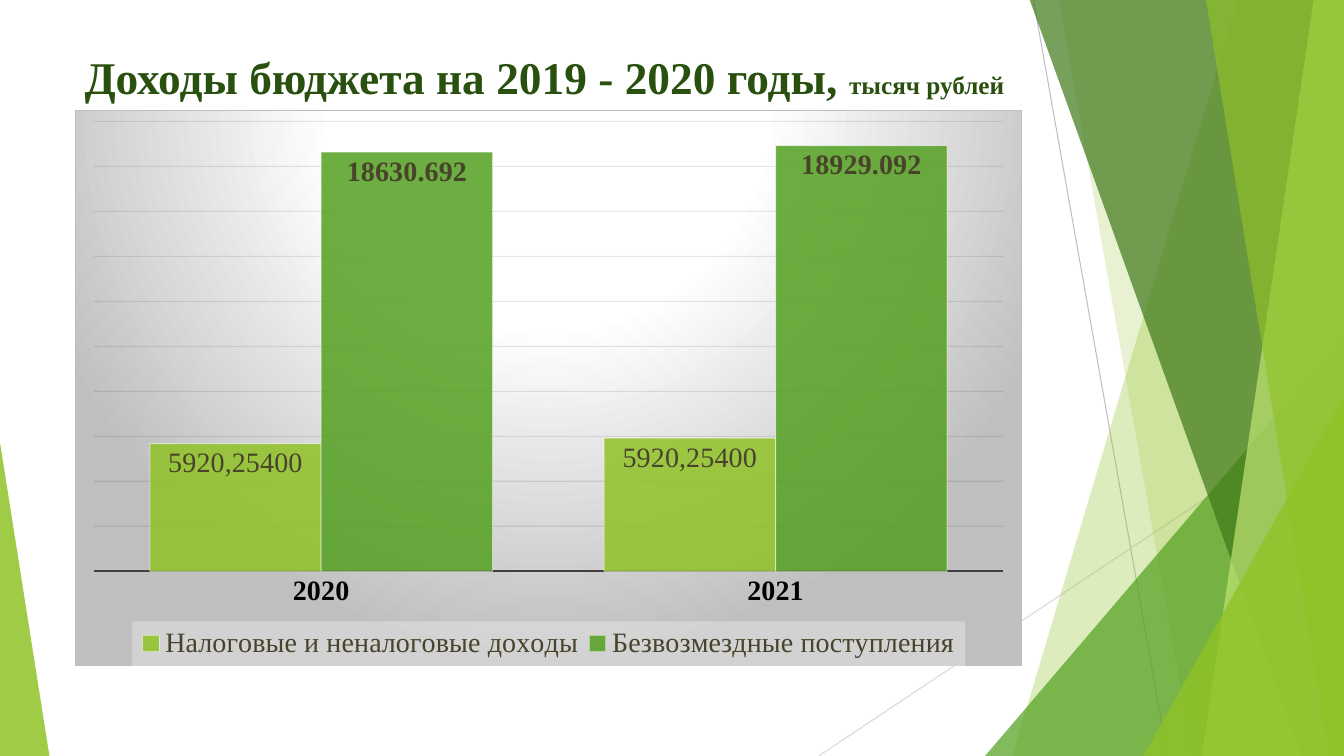
import pptx
import pptx.chart.data
import pptx.dml.color
import pptx.enum.chart
import pptx.enum.shapes
import pptx.enum.text
import pptx.oxml
import pptx.oxml.ns
import pptx.util
from lxml import etree

Inches, Pt, qn = pptx.util.Inches, pptx.util.Pt, pptx.oxml.ns.qn
SLIDE_W, SLIDE_H = 13.33, 7.5
FONT = "Times New Roman"
COLORS = {
    "lime": "90C226", "green": "54A021", "forest": "3F7819", "pale": "C0E474",
    "title": "2A5010", "label": "48432A", "black": "000000", "white": "FFFFFF",
    "axis": "404040", "grid": "0D0D0D", "grey": "BFBFBF", "light_grey": "D9D9D9",
    "legend": "F2F2F2",
}
TITLE_RUNS = [("Доходы бюджета на 2019 - 2020 годы, ", 32.4), ("тысяч рублей", 18)]
YEARS = ["2020", "2021"]
INCOME = [
    ("Налоговые и неналоговые доходы", [5675.054, 5920.254], "lime", ["5920,25400"] * 2),
    ("Безвозмездные поступления", [18630.692, 18929.092], "green", []),
]


def rgb(name):
    return pptx.dml.color.RGBColor.from_string(COLORS[name])


def style_font(font, size, color, bold=False):
    for attribute, value in {"name": FONT, "size": Pt(size), "bold": bold}.items():
        setattr(font, attribute, value)
    font.color.rgb = rgb(color)


def style_line(line, color, width):
    line.color.rgb = rgb(color)
    line.width = Pt(width)


def fade(element, opacity):
    """Give the first colour in the element an opacity in percent."""
    color = element.find(".//" + qn("a:srgbClr"))
    etree.SubElement(color, qn("a:alpha")).set("val", str(opacity * 1000))


def fill_facet(facet, color, opacity):
    facet.shadow.inherit = False
    facet.fill.solid()
    facet.fill.fore_color.rgb = rgb(color)
    facet.line.fill.background()
    fade(facet._element.spPr, opacity)


def draw_ray(slide, start, end, color):
    ray = slide.shapes.add_connector(
        pptx.enum.shapes.MSO_CONNECTOR.STRAIGHT, *map(Inches, start + end))
    style_line(ray.line, color, 0.75)
    etree.SubElement(ray._element.spPr, qn("a:effectLst"))


def draw_band(slide, top_left, bottom_left, color, opacity):
    """A facet from a slanted left edge to the right edge of the slide."""
    top, bottom = -0.01, SLIDE_H
    corners = [(top_left, top), (SLIDE_W, top), (SLIDE_W, bottom), (bottom_left, bottom)]
    points = [(Inches(x), Inches(y)) for x, y in corners]
    outline = slide.shapes.build_freeform(*points[0])
    outline.add_line_segments(points[1:], close=True)
    fill_facet(outline.convert_to_shape(), color, opacity)


def draw_corner(slide, left, top, width, apex, color, opacity):
    """A right triangle standing on the bottom edge of the slide."""
    corner = slide.shapes.add_shape(
        pptx.enum.shapes.MSO_SHAPE.ISOSCELES_TRIANGLE,
        Inches(left), Inches(top), Inches(width), Inches(SLIDE_H - top))
    corner.adjustments[0] = apex
    fill_facet(corner, color, opacity)


def draw_facets(slide):
    draw_ray(slide, (10.25, 0), (11.58, SLIDE_H), "grey")
    draw_ray(slide, (SLIDE_W, 4.03), (8.12, SLIDE_H), "light_grey")
    draw_band(slide, 12.28, 10.04, "lime", 30)
    draw_band(slide, 10.5, 11.83, "lime", 20)
    draw_corner(slide, 9.77, 3.33, 3.56, 1, "green", 72)
    draw_band(slide, 10.21, 12.91, "forest", 70)
    draw_band(slide, 13.03, 11.92, "pale", 70)
    draw_band(slide, 11.96, 13.18, "lime", 65)
    draw_corner(slide, 11.34, 3.93, 1.99, 1, "lime", 80)
    draw_corner(slide, 0, 4.39, 0.49, 0, "lime", 85)


def add_title(slide, left, top, width, height):
    heading = slide.shapes.add_textbox(*map(Inches, (left, top, width, height))).text_frame
    heading.word_wrap = True
    heading.vertical_anchor = pptx.enum.text.MSO_ANCHOR.BOTTOM
    for words, size in TITLE_RUNS:
        run = heading.paragraphs[0].add_run()
        run.text = words
        style_font(run.font, size, "title", True)


def chart_xml(body):
    return pptx.oxml.parse_xml(body.replace(">", " " + pptx.oxml.ns.nsdecls("c", "a") + ">", 1))


def manual_layout(x, y, w, h, inner=False):
    target = '<c:layoutTarget val="inner"/>' if inner else ""
    modes = '<c:xMode val="edge"/><c:yMode val="edge"/>'
    sizes = "".join(f'<c:{k} val="{v}"/>' for k, v in zip("xywh", (x, y, w, h)))
    return chart_xml(f"<c:layout><c:manualLayout>{target}{modes}{sizes}</c:manualLayout></c:layout>")


def drop_layout(element):
    for layout in element.findall(qn("c:layout")):
        element.remove(layout)


def style_series(series, color, captions):
    series.format.fill.solid()
    series.format.fill.fore_color.rgb = rgb(color)
    style_line(series.format.line, "white", 0.75)
    properties = series._element.spPr
    fade(properties, 85)
    fade(properties.find(qn("a:ln")), 50)
    inside = pptx.enum.chart.XL_LABEL_POSITION.INSIDE_END
    label_format = {"show_value": True, "position": inside,
                    "number_format": "0.000", "number_format_is_linked": False}
    for attribute, value in label_format.items():
        setattr(series.data_labels, attribute, value)
    style_font(series.data_labels.font, 20, "label", True)
    for index, caption in enumerate(captions):
        label = series.points[index].data_label
        run = label.text_frame.paragraphs[0].add_run()
        run.text = caption
        style_font(run.font, 20, "label")
        label.position = inside


def style_axes(chart):
    years, amounts = chart.category_axis, chart.value_axis
    years.major_tick_mark = pptx.enum.chart.XL_TICK_MARK.NONE
    style_font(years.tick_labels.font, 20, "black", True)
    style_line(years.format.line, "axis", 1.5)
    scale = {"minimum_scale": 0, "maximum_scale": 20000, "major_unit": 2000,
             "has_major_gridlines": True, "visible": False}
    for attribute, value in scale.items():
        setattr(amounts, attribute, value)
    style_line(amounts.major_gridlines.format.line, "grid", 0.75)
    fade(amounts._element.find(qn("c:majorGridlines")), 10)


def style_legend(chart):
    chart.has_legend = True
    legend = chart.legend
    legend.position = pptx.enum.chart.XL_LEGEND_POSITION.BOTTOM
    legend.include_in_layout = False
    style_font(legend.font, 20, "label")
    drop_layout(legend._element)
    overlay = legend._element.find(qn("c:overlay"))
    overlay.addprevious(manual_layout(0.06, 0.92, 0.88, 0.08))
    overlay.addnext(chart_xml(
        f'<c:spPr><a:solidFill><a:srgbClr val="{COLORS["legend"]}">'
        '<a:alpha val="39000"/></a:srgbClr></a:solidFill></c:spPr>'))


def style_background(chart):
    stops = "".join(
        f'<a:gs pos="{position * 1000}"><a:srgbClr val="{COLORS[color]}"/></a:gs>'
        for position, color in [(0, "white"), (39, "white"), (100, "grey")])
    chart._chartSpace.find(qn("c:chart")).addnext(chart_xml(
        f'<c:spPr><a:gradFill><a:gsLst>{stops}</a:gsLst><a:path path="circle">'
        '<a:fillToRect l="50000" t="-80000" r="50000" b="180000"/></a:path></a:gradFill>'
        f'<a:ln w="9525"><a:solidFill><a:srgbClr val="{COLORS["grey"]}"/></a:solidFill></a:ln>'
        "</c:spPr>"))


def add_income_chart(slide, left, top, width, height):
    income = pptx.chart.data.CategoryChartData(number_format="0.00000")
    income.categories = YEARS
    for name, amounts, _, _ in INCOME:
        income.add_series(name, amounts)
    chart = slide.shapes.add_chart(
        pptx.enum.chart.XL_CHART_TYPE.COLUMN_CLUSTERED,
        *map(Inches, (left, top, width, height)), income).chart
    chart.has_title = False
    style_font(chart.font, 20, "label")
    columns = chart.plots[0]
    for attribute, value in {"gap_width": 65, "overlap": 0, "vary_by_categories": False}.items():
        setattr(columns, attribute, value)
    for series, (_, _, color, captions) in zip(columns.series, INCOME):
        style_series(series, color, captions)
    style_axes(chart)
    style_legend(chart)
    style_background(chart)
    plot_area = chart._chartSpace.find(".//" + qn("c:plotArea"))
    drop_layout(plot_area)
    plot_area.insert(0, manual_layout(0.02, 0.02, 0.96, 0.81, inner=True))


def main():
    deck = pptx.Presentation()
    deck.slide_width, deck.slide_height = Inches(SLIDE_W), Inches(SLIDE_H)
    slide = deck.slides.add_slide(deck.slide_layouts[6])
    draw_facets(slide)
    add_title(slide, 0.74, 0.42, 9.8, 0.66)
    add_income_chart(slide, 0.74, 1.09, 9.4, 5.52)
    deck.save("out.pptx")


if __name__ == "__main__":
    main()
